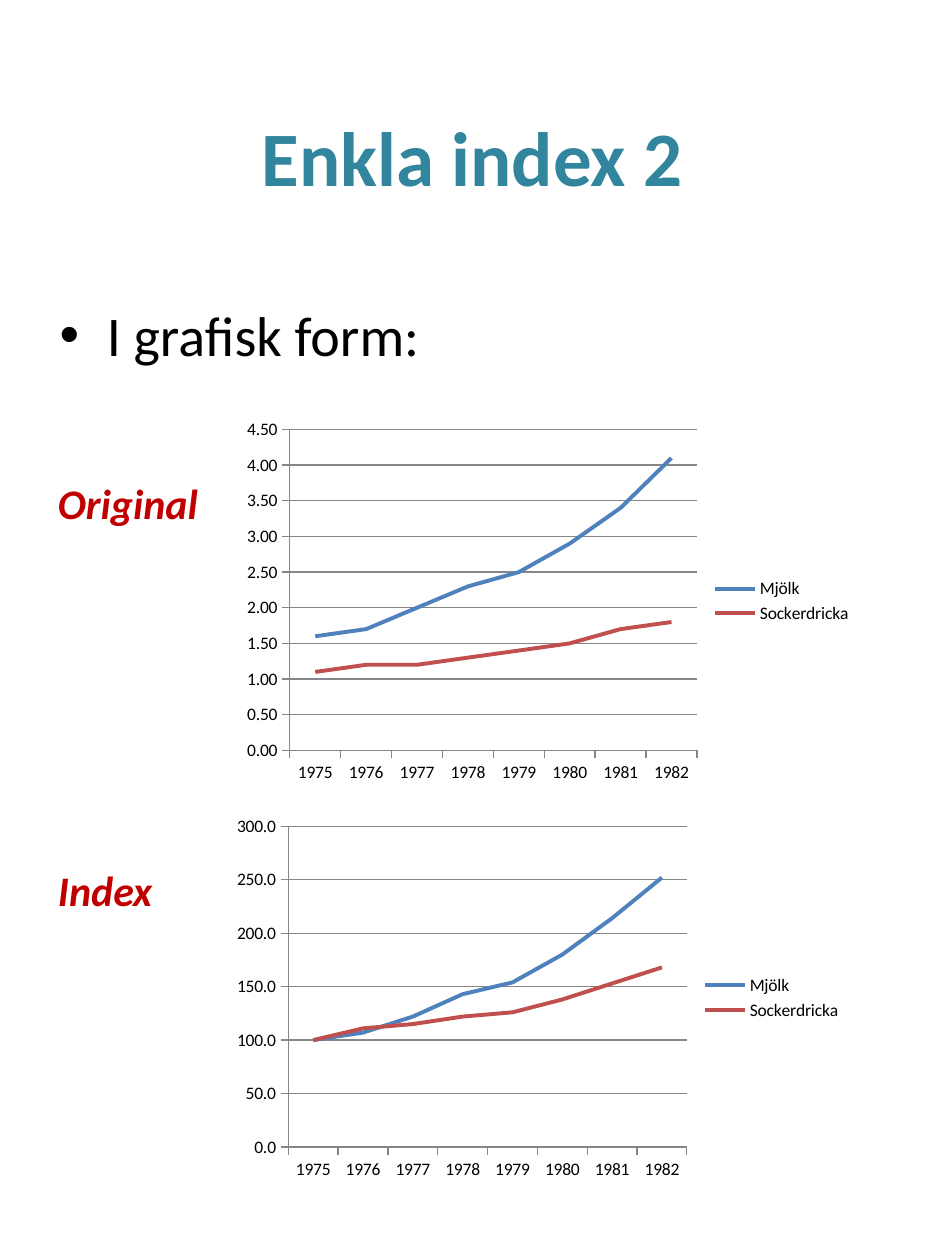
import pptx
import pptx.chart.data
import pptx.dml.color
import pptx.enum.chart
import pptx.enum.text
import pptx.util
from lxml import etree

Pt = pptx.util.Pt
RGBColor = pptx.dml.color.RGBColor
ANCHOR = pptx.enum.text.MSO_ANCHOR
ALIGN = pptx.enum.text.PP_ALIGN

TEAL = RGBColor(0x31, 0x85, 0x9C)
BLACK = RGBColor(0, 0, 0)
RED = RGBColor(0xC0, 0, 0)
GRAY = RGBColor(0x86, 0x86, 0x86)
SERIES_COLORS = [RGBColor(0x4F, 0x81, 0xBD), RGBColor(0xC0, 0x50, 0x4D)]
FONT = "Calibri"

TITLE = "Enkla index 2"
BULLET = "I grafisk form:"
YEARS = [str(year) for year in range(1975, 1983)]
# label, label top, chart left, chart top, number format, axis maximum, axis step, series
CHARTS = [
    ("Original", 269.3, 134, 235.5, "0.00", 4.5, 0.5, {
        "Mjölk": [1.6, 1.7, 2, 2.3, 2.5, 2.9, 3.4, 4.1],
        "Sockerdricka": [1.1, 1.2, 1.2, 1.3, 1.4, 1.5, 1.7, 1.8],
    }),
    ("Index", 490.3, 128.2, 462.2, "0.0", 300, 50, {
        "Mjölk": [100, 107, 122, 143, 154, 180, 214, 252],
        "Sockerdricka": [100, 111, 115, 122, 126, 138, 153, 168],
    }),
]
LABEL_LEFT, LABEL_WIDTH, LABEL_HEIGHT = 26, 96.5, 39.6
CHART_WIDTH, CHART_HEIGHT = 360, 216
BULLET_INDENT = 27


def set_format(target, values):
    for name, value in values.items():
        setattr(target, name, value)


def add_text(page, text, frame, size, color, anchor=ANCHOR.TOP, align=ALIGN.LEFT, **style):
    box = page.shapes.add_textbox(*map(Pt, frame))
    set_format(box.text_frame, {"word_wrap": True, "vertical_anchor": anchor})
    para = box.text_frame.paragraphs[0]
    para.alignment = align
    span = para.add_run()
    span.text = text
    set_format(span.font, {"name": FONT, "size": Pt(size), **style})
    span.font.color.rgb = color
    return para


def add_bullet(para):
    properties = para._p.get_or_add_pPr()
    properties.set("marL", str(Pt(BULLET_INDENT)))
    properties.set("indent", str(-Pt(BULLET_INDENT)))
    space = "{http://schemas.openxmlformats.org/drawingml/2006/main}"
    etree.SubElement(properties, space + "buFont", typeface="Arial")
    etree.SubElement(properties, space + "buChar", char="•")


def draw_line(line, color, width):
    line.color.rgb = color
    line.width = Pt(width)


def add_line_chart(page, left, top, number_format, maximum, step, series):
    data = pptx.chart.data.CategoryChartData(number_format=number_format)
    data.categories = YEARS
    for name, values in series.items():
        data.add_series(name, values)
    frame = map(Pt, (left, top, CHART_WIDTH, CHART_HEIGHT))
    chart = page.shapes.add_chart(pptx.enum.chart.XL_CHART_TYPE.LINE, *frame, data).chart
    set_format(chart, {"has_title": False, "has_legend": True})
    set_format(chart.font, {"name": FONT, "size": Pt(10)})
    chart.font.color.rgb = BLACK
    set_format(chart.legend, {
        "position": pptx.enum.chart.XL_LEGEND_POSITION.RIGHT,
        "include_in_layout": False,
    })
    chart.plots[0].vary_by_categories = False
    for line, color in zip(chart.plots[0].series, SERIES_COLORS):
        line.smooth = False
        line.marker.style = pptx.enum.chart.XL_MARKER_STYLE.NONE
        draw_line(line.format.line, color, 2.25)
    for axis in (chart.category_axis, chart.value_axis):
        axis.major_tick_mark = pptx.enum.chart.XL_TICK_MARK.OUTSIDE
        draw_line(axis.format.line, GRAY, 0.75)
    set_format(chart.value_axis, {
        "minimum_scale": 0, "maximum_scale": maximum,
        "major_unit": step, "has_major_gridlines": True,
    })
    set_format(chart.value_axis.tick_labels, {
        "number_format": number_format, "number_format_is_linked": False,
    })
    draw_line(chart.value_axis.major_gridlines.format.line, GRAY, 0.75)


def main():
    deck = pptx.Presentation()
    set_format(deck, {"slide_width": Pt(540), "slide_height": Pt(720)})
    page = deck.slides.add_slide(deck.slide_layouts[6])
    add_text(page, TITLE, (27, 28.8, 486, 120), 44, TEAL,
             ANCHOR.MIDDLE, ALIGN.CENTER, bold=True)
    para = add_text(page, BULLET, (27, 168, 486, 515.5), 32, BLACK)
    para.space_before = Pt(6.4)
    add_bullet(para)
    for label, label_top, *chart in CHARTS:
        para = add_text(page, label, (LABEL_LEFT, label_top, LABEL_WIDTH, LABEL_HEIGHT),
                        24, RED, bold=True, italic=True)
        para.space_before = Pt(4.8)
        add_line_chart(page, *chart)
    deck.save("out.pptx")


if __name__ == "__main__":
    main()
